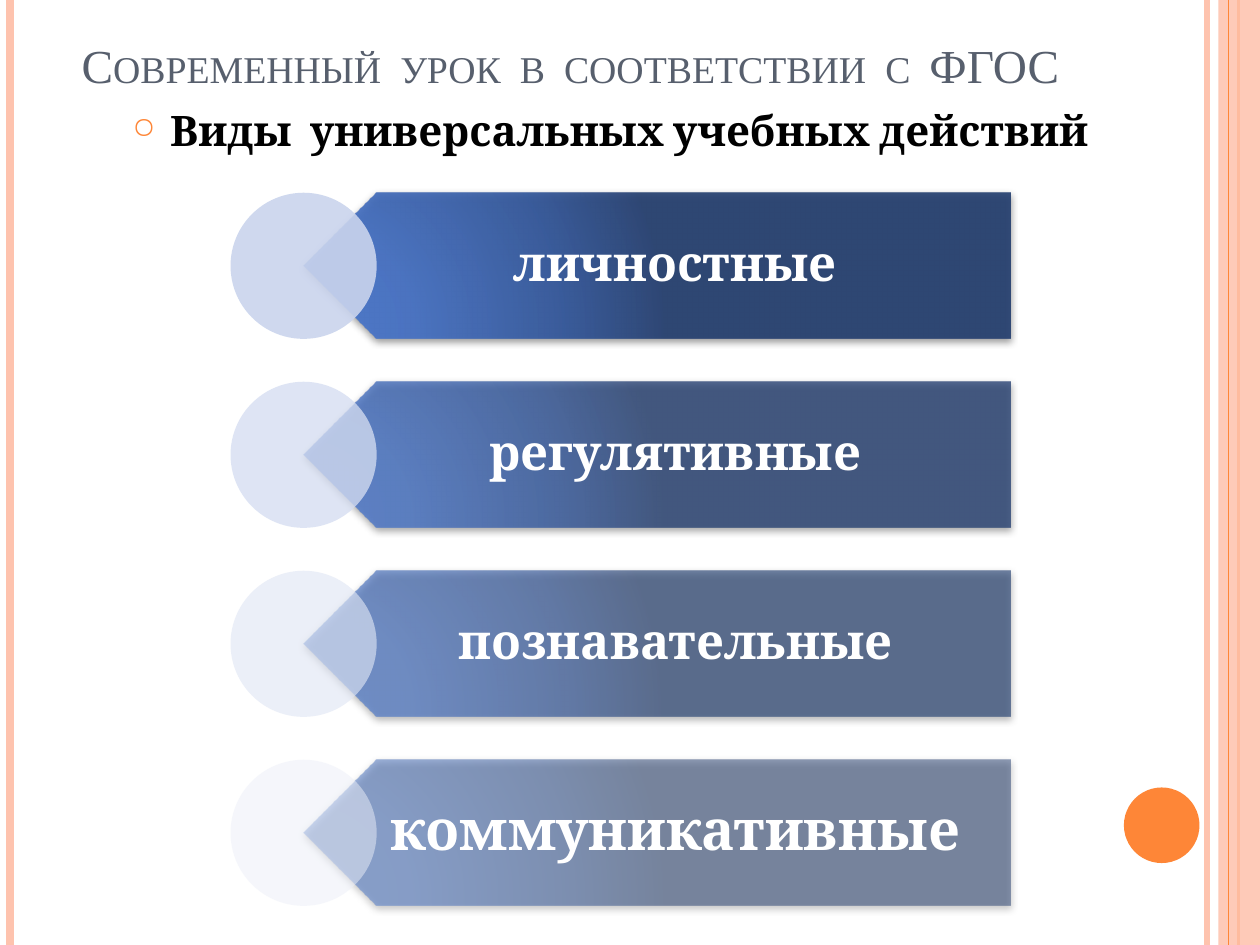
from lxml import etree
from pptx import Presentation
from pptx.dml.color import RGBColor
from pptx.enum.shapes import MSO_CONNECTOR, MSO_SHAPE
from pptx.enum.text import MSO_ANCHOR, PP_ALIGN
from pptx.oxml import parse_xml
from pptx.oxml.ns import qn
from pptx.util import Inches, Pt

STRAIGHT = MSO_CONNECTOR.STRAIGHT
RECTANGLE, OVAL, PENTAGON = MSO_SHAPE.RECTANGLE, MSO_SHAPE.OVAL, MSO_SHAPE.PENTAGON
MIDDLE, BOTTOM = MSO_ANCHOR.MIDDLE, MSO_ANCHOR.BOTTOM
LEFT, CENTER = PP_ALIGN.LEFT, PP_ALIGN.CENTER
NAMESPACE = 'xmlns:a="http://schemas.openxmlformats.org/drawingml/2006/main"'
COLORS = {"peach": "FEC3AE", "orange": "FE8637", "title": "575F6D",
          "black": "000000", "white": "FFFFFF"}
GRADIENT = [(0, "4574CC"), (30, "4370C5"), (75, "2F5397"), (100, "233E70")]

presentation = Presentation()
presentation.slide_width, presentation.slide_height = Inches(10), Inches(7.5)
slide = presentation.slides.add_slide(presentation.slide_layouts[6])


def add_filled(kind, left, top, width, height, color, opacity=100):
    shape = slide.shapes.add_shape(
        kind, Inches(left), Inches(top), Inches(width), Inches(height))
    shape.shadow.inherit = False
    shape.line.fill.background()
    shape.fill.solid()
    shape.fill.fore_color.rgb = RGBColor.from_string(color)
    if opacity < 100:
        color_element = shape._element.spPr.find(".//" + qn("a:srgbClr"))
        etree.SubElement(color_element, qn("a:alpha"), val=str(round(opacity * 1000)))
    return shape


def add_text(text, box, size, font, color, anchor, alignment, bold=False,
             insets=(0.1, 0.05, 0.1, 0.05)):
    frame = slide.shapes.add_textbox(*map(Inches, box)).text_frame
    frame.word_wrap = True
    frame.vertical_anchor = anchor
    (frame.margin_left, frame.margin_top,
     frame.margin_right, frame.margin_bottom) = map(Inches, insets)
    paragraph = frame.paragraphs[0]
    paragraph.text = text
    paragraph.alignment = alignment
    paragraph.font.size, paragraph.font.name, paragraph.font.bold = Pt(size), font, bold
    paragraph.font.color.rgb = RGBColor.from_string(COLORS[color])
    return paragraph


# Vertical stripes and the disc at the edges
for x, color, weight in [(9.58, "peach", 3), (0.08, "peach", 4.5),
                         (9.83, "orange", 1.5), (9.75, "orange", 0.75)]:
    if x == 9.83:
        band_line_start = len(slide.shapes)
    stripe = slide.shapes.add_connector(
        STRAIGHT, Inches(x), 0, Inches(x), presentation.slide_height)
    stripe.line.color.rgb = RGBColor.from_string(COLORS[color])
    stripe.line.width = Pt(weight)
    etree.SubElement(stripe._element.spPr, qn("a:effectLst"))
    if x == 9.83:
        add_filled(RECTANGLE, 9.67, 0, 0.33, 7.5, COLORS["peach"], 87)
add_filled(OVAL, 8.92, 6.25, 0.6, 0.6, COLORS["orange"])

# Bulleted heading
heading = add_text("Виды  универсальных учебных действий ", (0.23, 0.78, 9.3, 0.6),
                   24, "Cambria", "black", MSO_ANCHOR.TOP, CENTER, bold=True)
heading.space_before = Pt(6)
properties = heading._p.get_or_add_pPr()
properties.set("marL", str(Inches(0.3)))
properties.set("indent", str(Inches(-0.3)))
bullet = [f'<a:buClr {NAMESPACE}><a:srgbClr val="{COLORS["orange"]}"/></a:buClr>',
          f'<a:buSzPct {NAMESPACE} val="70000"/>',
          f'<a:buChar {NAMESPACE} char="○"/>']
for position, xml in enumerate(bullet, start=1):
    properties.insert(position, parse_xml(xml))

# Title in small capitals
title = add_text("Современный  урок  в  соответствии  с  ФГОС", (0.55, 0.23, 8.52, 0.56),
                 27, "Times New Roman", "title", BOTTOM, LEFT)
title.runs[0].font._element.set("cap", "small")

# Four kinds of actions, fading from top to bottom
actions = [("личностные", 28, "CAD4ED"), ("регулятивные", 28, "D5DDF1"),
           ("познавательные", 28, "E0E6F4"), ("коммуникативные", 32, "ECEFF8")]
ROW_TOP, ROW_STEP, ROW_HEIGHT = 1.53, 1.5, 1.16
ARROW_LEFT, ARROW_WIDTH = 2.41, 5.61
for row, (name, size, circle_color) in enumerate(actions):
    top = ROW_TOP + row * ROW_STEP
    opacity = 90 - 40 * row / (len(actions) - 1)
    box = (ARROW_LEFT, top, ARROW_WIDTH, ROW_HEIGHT)

    arrow = add_filled(PENTAGON, *box, GRADIENT[0][1])
    arrow.rotation = 180
    stops = "".join(
        f'<a:gs pos="{place * 1000}"><a:srgbClr val="{color}">'
        f'<a:alpha val="{round(opacity * 1000)}"/></a:srgbClr></a:gs>'
        for place, color in GRADIENT)
    arrow_properties = arrow._element.spPr
    arrow_properties.replace(arrow_properties.find(qn("a:solidFill")), parse_xml(
        f'<a:gradFill {NAMESPACE} rotWithShape="0"><a:gsLst>{stops}</a:gsLst>'
        '<a:path path="circle"><a:fillToRect l="5000" t="100000" r="120000" b="10000"/>'
        '</a:path></a:gradFill>'))
    arrow_properties.replace(arrow_properties.find(qn("a:effectLst")), parse_xml(
        f'<a:effectLst {NAMESPACE}><a:outerShdw blurRad="{Pt(4)}" dist="{Pt(1.6)}" '
        f'dir="5400000" rotWithShape="0"><a:srgbClr val="{COLORS["black"]}">'
        '<a:alpha val="42000"/></a:srgbClr></a:outerShdw></a:effectLst>'))

    label = add_text(name, box, size, "Cambria", "white", MIDDLE, CENTER, bold=True,
                     insets=(0.51, 0.12, 0.22, 0.12))
    label.line_spacing = 0.9
    add_filled(OVAL, ARROW_LEFT - ROW_HEIGHT / 2, top, ROW_HEIGHT, ROW_HEIGHT,
               circle_color, opacity)

presentation.save("out.pptx")
